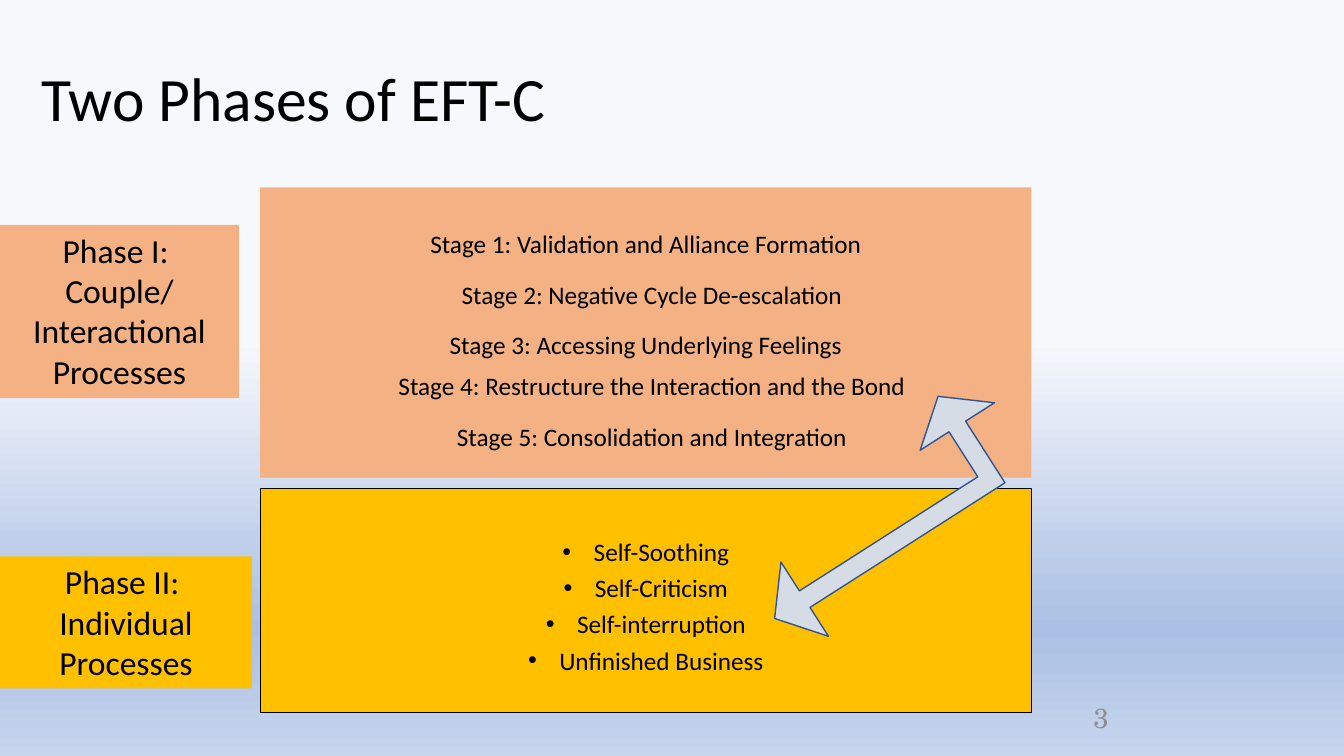
from dataclasses import dataclass

from lxml import etree
from pptx import Presentation
from pptx.dml.color import RGBColor
from pptx.enum.shapes import MSO_SHAPE
from pptx.enum.text import MSO_ANCHOR, PP_ALIGN
from pptx.oxml import parse_xml
from pptx.oxml.ns import nsdecls, qn
from pptx.util import Inches, Pt

RECTANGLE = MSO_SHAPE.RECTANGLE
DOUBLE_ARROW = MSO_SHAPE.LEFT_UP_ARROW
TOP, MIDDLE = MSO_ANCHOR.TOP, MSO_ANCHOR.MIDDLE
LEFT, CENTER = PP_ALIGN.LEFT, PP_ALIGN.CENTER


@dataclass(frozen=True)
class Theme:
    font: str = "Calibri"
    number_font: str = "TeX Gyre Schola"
    ink: str = "000000"
    number_ink: str = "8E8E94"
    couple: str = "F4B183"
    individual: str = "FFC000"
    arrow: str = "D6DCE5"
    arrow_line: str = "325491"
    title_size: float = 44
    label_size: float = 24
    body_size: float = 18
    number_size: float = 19.8
    backdrop: tuple = ((0, "F6F8FC"), (45, "F6F8FC"), (83, "ABC0E4"), (100, "C7D5ED"))


THEME = Theme()


@dataclass(frozen=True)
class Line:
    text: str
    spacing: float = 1.0
    before: float = 0
    indent: float = 0
    bullet: bool = False


@dataclass(frozen=True)
class Box:
    place: tuple
    lines: tuple
    size: float
    fill: str = ""
    outline: str = ""
    font: str = THEME.font
    ink: str = THEME.ink
    align: PP_ALIGN = CENTER
    anchor: MSO_ANCHOR = TOP
    margin_top: float = 0.05


STAGES = (
    Line("Stage 1: Validation and Alliance Formation", 0.9),
    Line("Stage 2: Negative Cycle De-escalation", 1.2, 10, 0.12),
    Line("Stage 3: Accessing Underlying Feelings", 1.2, 10),
    Line("Stage 4: Restructure the Interaction and the Bond", 0.9, 10, 0.12),
    Line("Stage 5: Consolidation and Integration", 1.2, 10, 0.12),
)
SELF_TASKS = tuple(
    Line(text, 1.2, indent=0.31, bullet=True)
    for text in ("Self-Soothing", "Self-Criticism", "Self-interruption", "Unfinished Business")
)
COUPLE_LABEL = (Line("Phase I: "), Line("Couple/"), Line("Interactional Processes"))
INDIVIDUAL_LABEL = (Line("Phase II: "), Line("Individual Processes"))

BOXES_BELOW_ARROW = (
    Box((0.31, 0.48, 12.22, 1.05), (Line("Two Phases of EFT-C", 0.9),),
        THEME.title_size, align=LEFT, anchor=MIDDLE),
    Box((2.58, 1.86, 7.65, 2.88), STAGES, THEME.body_size, THEME.couple, margin_top=0.44),
    Box((9.42, 6.95, 3, 0.4), (Line("3", 0.8),), THEME.number_size,
        font=THEME.number_font, ink=THEME.number_ink, anchor=MIDDLE),
    Box((2.58, 4.85, 7.65, 2.22), SELF_TASKS, THEME.body_size, THEME.individual,
        THEME.ink, margin_top=0.41),
)
PHASE_LABELS = (
    Box((0, 2.23, 2.37, 1.72), COUPLE_LABEL, THEME.label_size, THEME.couple),
    Box((0, 5.52, 2.5, 1.31), INDIVIDUAL_LABEL, THEME.label_size, THEME.individual),
)


def set_all(target: object, values: dict) -> None:
    for name, value in values.items():
        setattr(target, name, value)


def paint(shape, fill: str, outline: str = "", width: float = 0.75) -> None:
    shape.shadow.inherit = False
    shape.fill.solid()
    shape.fill.fore_color.rgb = RGBColor.from_string(fill)
    if outline:
        shape.line.color.rgb = RGBColor.from_string(outline)
        shape.line.width = Pt(width)
    else:
        shape.line.fill.background()


def paint_backdrop(page) -> None:
    fill = page.background.fill
    fill.gradient()
    fill.gradient_angle = 270
    stops = page.element.find(".//" + qn("a:gsLst"))
    for stop in list(stops):
        stops.remove(stop)
    for position, color in THEME.backdrop:
        stops.append(parse_xml(
            f'<a:gs {nsdecls("a")} pos="{position * 1000}"><a:srgbClr val="{color}"/></a:gs>'))


def write_line(para, line: Line, box: Box) -> None:
    set_all(para, {"alignment": box.align, "line_spacing": line.spacing,
                   "space_before": Pt(line.before)})
    properties = para._p.get_or_add_pPr()
    properties.set("marL", str(Inches(line.indent)))
    properties.set("indent", str(-Inches(line.indent) if line.bullet else 0))
    if line.bullet:
        etree.SubElement(properties, qn("a:buFont")).set("typeface", "Arial")
        etree.SubElement(properties, qn("a:buChar")).set("char", "•")
    span = para.add_run()
    span.text = line.text
    set_all(span.font, {"name": box.font, "size": Pt(box.size)})
    span.font.color.rgb = RGBColor.from_string(box.ink)


def draw_box(page, box: Box) -> None:
    place = [Inches(length) for length in box.place]
    if box.fill:
        shape = page.shapes.add_shape(RECTANGLE, *place)
        paint(shape, box.fill, box.outline)
    else:
        shape = page.shapes.add_textbox(*place)
    frame = shape.text_frame
    set_all(frame, {"word_wrap": True, "vertical_anchor": box.anchor,
                    "margin_top": Inches(box.margin_top)})
    for index, line in enumerate(box.lines):
        para = frame.add_paragraph() if index else frame.paragraphs[0]
        write_line(para, line, box)


def draw_arrow(page) -> None:
    place = [Inches(length) for length in (7.3, 4.39, 2.99, 1.42)]
    arrow = page.shapes.add_shape(DOUBLE_ARROW, *place)
    arrow.rotation = 327.4
    for index, value in enumerate((0.137, 0.308, 0.25)):
        arrow.adjustments[index] = value
    paint(arrow, THEME.arrow, THEME.arrow_line, 1)


def main() -> None:
    deck = Presentation()
    set_all(deck, {"slide_width": Inches(13.33), "slide_height": Inches(7.5)})
    page = deck.slides.add_slide(deck.slide_layouts[6])
    paint_backdrop(page)
    for box in BOXES_BELOW_ARROW:
        draw_box(page, box)
    draw_arrow(page)
    for label in PHASE_LABELS:
        draw_box(page, label)
    deck.save("out.pptx")


if __name__ == "__main__":
    main()
